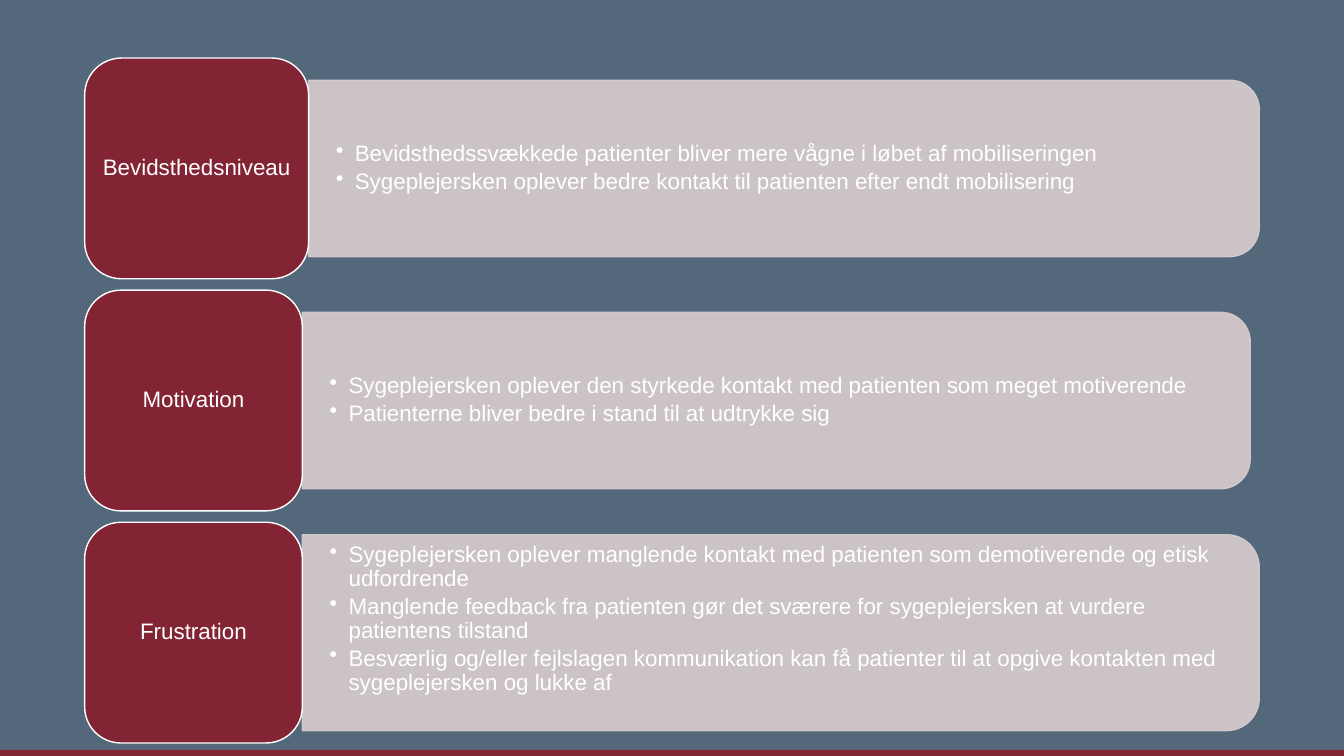
import pptx
import pptx.util
import pptx.dml.color
import pptx.enum.shapes
import pptx.enum.text
import lxml.etree

Pt = pptx.util.Pt
KIND = pptx.enum.shapes.MSO_SHAPE
ALIGN = pptx.enum.text.PP_ALIGN
MIDDLE = pptx.enum.text.MSO_ANCHOR.MIDDLE
NS = "{http://schemas.openxmlformats.org/drawingml/2006/main}"

COLORS = {"back": "54687C", "red": "822433", "panel": "D8CDCE", "white": "FFFFFF"}
WIDE, HIGH = 960, 540
LEFT, FIRST, PITCH, TALL = 60.5, 120.3, 165.8, 157.7

# label, tile width, panel width, panel height, bottom inset, points
ROWS = [
    ("Bevidsthedsniveau", 160, 679, 126, 0, [
        "Bevidsthedssvækkede patienter bliver mere vågne i løbet af mobiliseringen",
        "Sygeplejersken oplever bedre kontakt til patienten efter endt mobilisering",
    ]),
    ("Motivation", 155.5, 677, 126, 0, [
        "Sygeplejersken oplever den styrkede kontakt med patienten som meget motiverende",
        "Patienterne bliver bedre i stand til at udtrykke sig",
    ]),
    ("Frustration", 155.5, 683.5, 140, 19, [
        "Sygeplejersken oplever manglende kontakt med patienten som demotiverende og etisk udfordrende",
        "Manglende feedback fra patienten gør det sværere for sygeplejersken at vurdere patientens tilstand",
        "Besværlig og/eller fejlslagen kommunikation kan få patienter til at opgive kontakten med "
        "sygeplejersken og lukke af",
    ]),
]


class Deck:
    font, size = "Arial", 16

    def __init__(self):
        self.show = pptx.Presentation()
        self.show.slide_width, self.show.slide_height = Pt(WIDE), Pt(HIGH)
        self.slide = self.show.slides.add_slide(self.show.slide_layouts[6])
        self.paint(self.slide.background.fill, "back")

    def paint(self, fill, color):
        fill.solid()
        fill.fore_color.rgb = pptx.dml.color.RGBColor.from_string(COLORS[color])

    def shape(self, kind, x, y, w, h, fill, line=None):
        item = self.slide.shapes.add_shape(kind, Pt(x), Pt(y), Pt(w), Pt(h))
        item.shadow.inherit = False
        self.paint(item.fill, fill)
        if line:
            self.paint(item.line.fill, line)
            item.line.width = Pt(1)
        else:
            item.line.fill.background()
        return item

    def frame(self, item, side, top, bottom):
        box = item.text_frame
        box.word_wrap = True
        box.vertical_anchor = MIDDLE
        box.margin_left = box.margin_right = Pt(side)
        box.margin_top, box.margin_bottom = Pt(top), Pt(bottom)
        return box

    def add_text(self, para, text, align):
        para.alignment = align
        para.line_spacing = 0.9
        run = para.add_run()
        run.text = text
        run.font.name, run.font.size = self.font, Pt(self.size)
        self.paint(run.font.fill, "white")

    def tile(self, x, mid, w, label):
        item = self.shape(KIND.ROUNDED_RECTANGLE, x, mid - TALL / 2, w, TALL, "red", "white")
        box = self.frame(item, 4, 2, 2)
        self.add_text(box.paragraphs[0], label, ALIGN.CENTER)

    def panel(self, x, mid, w, h):
        """Draw a bar whose right-hand corners are round."""
        item = self.shape(KIND.ROUND_2_SAME_RECTANGLE, x + (w - h) / 2, mid - w / 2,
                          h, w, "panel", "panel")
        item.rotation = 90
        for node in item.element.spPr.iter(NS + "srgbClr"):
            lxml.etree.SubElement(node, NS + "alpha", val="90000")

    def points(self, x, mid, w, h, lift, lines):
        item = self.slide.shapes.add_textbox(Pt(x), Pt(mid - h / 2), Pt(w), Pt(h))
        box = self.frame(item, 19.5, 0, lift)
        for i, text in enumerate(lines):
            para = box.add_paragraph() if i else box.paragraphs[0]
            props = para._p.get_or_add_pPr()
            props.set("marL", str(Pt(13.5)))
            props.set("indent", str(-Pt(13.5)))
            lxml.etree.SubElement(props, NS + "buChar", char="•")
            para.level = 1
            para.space_after = Pt(2.4)
            self.add_text(para, text, ALIGN.LEFT)


def main():
    deck = Deck()
    deck.shape(KIND.RECTANGLE, 0, 535.7, WIDE, 4.3, "red")
    for i, (label, tile, wide, high, lift, lines) in enumerate(ROWS):
        mid = FIRST + i * PITCH
        edge = LEFT + tile
        deck.panel(edge, mid, wide, high)
        deck.points(edge, mid, wide - 6.5, high - 13, lift, lines)
        deck.tile(LEFT, mid, tile, label)
    deck.show.save("out.pptx")


if __name__ == "__main__":
    main()
